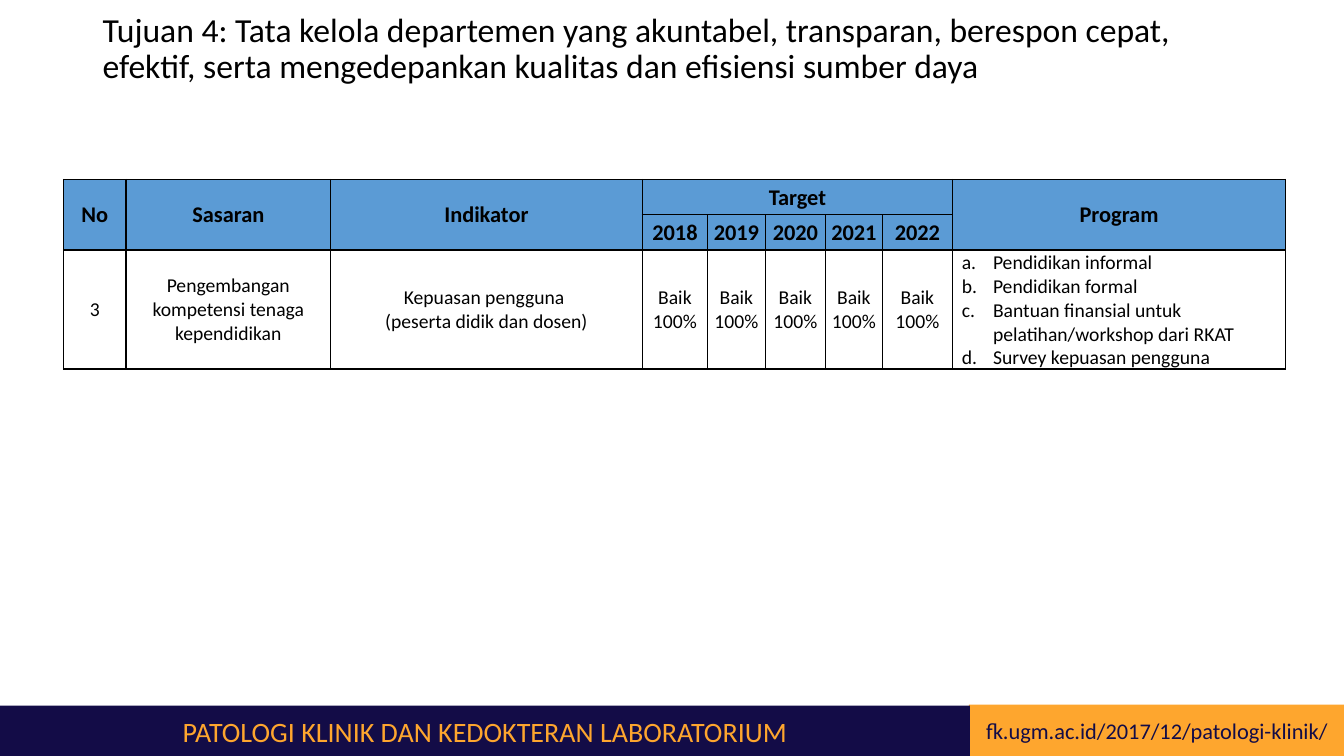
"""Build the slide on goal 4: target table with title and footer bar."""
from lxml.etree import SubElement as Sub
from pptx import Presentation
from pptx.dml.color import RGBColor as RGB
from pptx.enum.shapes import MSO_SHAPE as Shape
from pptx.enum.text import MSO_ANCHOR as Anchor, PP_ALIGN as Align
from pptx.oxml.ns import qn
from pptx.util import Inches, Pt

COLORS = {"black": "000000", "white": "FFFFFF", "blue": "5B9BD5",
          "navy": "130C47", "orange": "FEA62E"}


def write(par, text, size, color="black", bold=False):
    run = par.add_run()
    run.text = text
    run.font.name = "Calibri"
    run.font.size = Pt(size)
    run.font.bold = bold
    run.font.color.rgb = RGB.from_string(COLORS[color])


def style(cell, color):
    props = cell._tc.get_or_add_tcPr()
    for side in ("lnL", "lnR", "lnT", "lnB"):
        line = Sub(props, qn("a:" + side), w=str(Pt(1)))
        fill = Sub(line, qn("a:solidFill"))
        Sub(fill, qn("a:srgbClr"), val=COLORS["black"])
    cell.fill.solid()
    cell.fill.fore_color.rgb = RGB.from_string(COLORS[color])
    cell.margin_left = cell.margin_right = cell.margin_top = Inches(0.01)
    cell.margin_bottom = 0
    cell.vertical_anchor = Anchor.MIDDLE


deck = Presentation()
deck.slide_width, deck.slide_height = Inches(13.33), Inches(7.5)
slide = deck.slides.add_slide(deck.slide_layouts[6])

title = slide.shapes.add_textbox(Inches(0.92), Inches(0.24), Inches(11.5), Inches(0.86))
frame = title.text_frame
frame.word_wrap = True
frame.vertical_anchor = Anchor.MIDDLE
frame.margin_bottom = Inches(0.41)
par = frame.paragraphs[0]
par.line_spacing = 0.9
write(par, "Tujuan 4: Tata kelola departemen yang akuntabel, transparan, "
      "berespon cepat, efektif, serta mengedepankan kualitas dan efisiensi "
      "sumber daya", 24)

widths = [0.62, 2.03, 3.09, 0.65, 0.57, 0.6, 0.56, 0.7, 3.3]
heights = [0.35, 0.35, 1.18]
table = slide.shapes.add_table(3, 9, Inches(0.63), Inches(1.78),
                               Inches(sum(widths)), Inches(sum(heights))).table
table.first_row = table.horz_banding = False
for col, width in zip(table.columns, widths):
    col.width = Inches(width)
for row, height in zip(table.rows, heights):
    row.height = Inches(height)

heads = {0: "No", 1: "Sasaran", 2: "Indikator", 3: "Target", 8: "Program"}
years = {3 + i: str(2018 + i) for i in range(5)}
goal = {0: "3", 1: "Pengembangan kompetensi tenaga kependidikan",
        2: "Kepuasan pengguna \n(peserta didik dan dosen)",
        **{i: "Baik 100%" for i in years},
        8: "Pendidikan informal\nPendidikan formal\n"
           "Bantuan finansial untuk pelatihan/workshop dari RKAT\n"
           "Survey kepuasan pengguna"}

for r, texts in enumerate([heads, years, goal]):
    head = r < 2
    for c in range(len(widths)):
        cell = table.cell(r, c)
        style(cell, "blue" if head else "white")
        if c not in texts:
            continue
        for i, text in enumerate(texts[c].split("\n")):
            frame = cell.text_frame
            par = frame.add_paragraph() if i else frame.paragraphs[0]
            if r == 2 and c == 8:
                props = par._p.get_or_add_pPr()
                props.set("marL", str(Inches(0.39)))
                props.set("indent", str(-Inches(0.31)))
                Sub(props, qn("a:buFont"), typeface="+mj-lt")
                Sub(props, qn("a:buAutoNum"), type="alphaLcPeriod")
            else:
                par.alignment = Align.CENTER
            write(par, text, 16 if head else 14, bold=head)

table.cell(2, 8).vertical_anchor = Anchor.BOTTOM
for c in (0, 1, 2, 8):
    table.cell(0, c).merge(table.cell(1, c))
table.cell(0, 3).merge(table.cell(0, 7))

bars = [(9.61, 6.99, 3.73, "orange", "navy", 16, "fk.ugm.ac.id/2017/12/patologi-klinik/"),
        (0, 7, 9.62, "navy", "orange", 20, "PATOLOGI KLINIK DAN KEDOKTERAN LABORATORIUM")]
for left, top, width, back, ink, size, text in bars:
    bar = slide.shapes.add_shape(Shape.RECTANGLE, Inches(left), Inches(top),
                                 Inches(width), Inches(0.51))
    bar.shadow.inherit = False
    bar.fill.solid()
    bar.fill.fore_color.rgb = RGB.from_string(COLORS[back])
    bar.line.fill.background()
    bar.text_frame.word_wrap = True
    bar.text_frame.vertical_anchor = Anchor.MIDDLE
    par = bar.text_frame.paragraphs[0]
    par.alignment = Align.CENTER
    write(par, text, size, ink)

deck.save("out.pptx")
